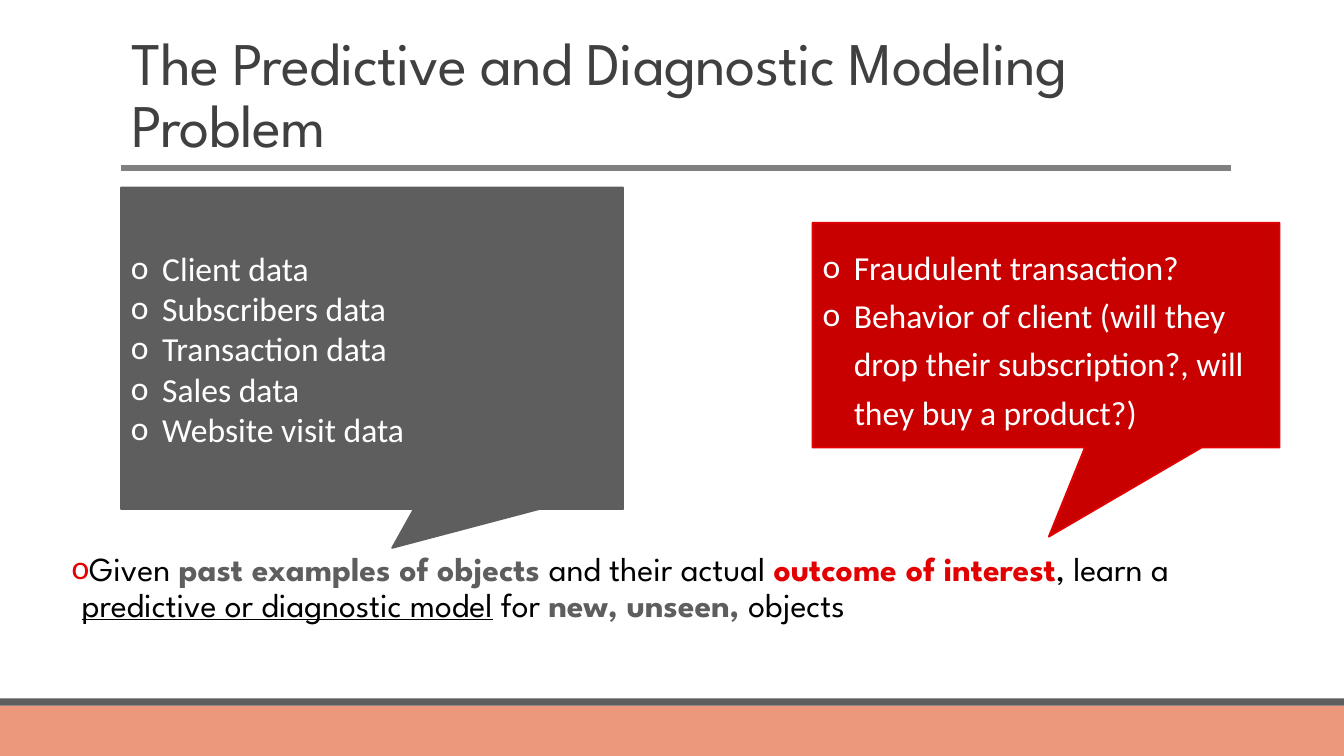
"""Build the slide on the predictive and diagnostic modeling problem."""
from dataclasses import dataclass

import lxml.etree
import pptx
import pptx.dml.color
import pptx.enum.shapes
import pptx.enum.text
import pptx.oxml.ns
import pptx.util

Inches = pptx.util.Inches
Pt = pptx.util.Pt


@dataclass(frozen=True)
class Theme:
    """Colours, fonts and type sizes."""
    gray: str = "5E5E5E"
    red: str = "E20000"
    deep_red: str = "C80000"
    salmon: str = "EC987D"
    rule: str = "808080"
    heading: str = "404040"
    black: str = "000000"
    white: str = "FFFFFF"
    display: str = "League Spartan"
    text: str = "Calibri"
    title_size: float = 43.2
    text_size: float = 24


THEME = Theme()
WIDTH, HEIGHT = 13.33, 7.5
TITLE = "The Predictive and Diagnostic Modeling Problem"
CALLOUTS = [
    {"at": (1.2, 1.86, 4.98, 3.19), "tail": (0.04, 0.621),
     "fill": THEME.gray, "line": THEME.gray, "spacing": 1.0,
     "items": ["Client data", "Subscribers data", "Transaction data",
               "Sales data", "Website visit data"]},
    {"at": (8.06, 2.21, 4.63, 2.23), "tail": (0.006, 0.897),
     "fill": THEME.deep_red, "line": THEME.red, "spacing": 1.2,
     "items": ["Fraudulent transaction?",
               "Behavior of client (will they drop their subscription?, "
               "will they buy a product?)"]},
]
STATEMENT = [
    ("Given ", THEME.black, ""),
    ("past examples of objects ", THEME.gray, "bold"),
    ("and their actual ", THEME.black, ""),
    ("outcome of interest", THEME.red, "bold"),
    (", learn a ", THEME.black, ""),
    ("predictive or diagnostic model", THEME.black, "underline"),
    (" for ", THEME.black, ""),
    ("new, unseen, ", THEME.gray, "bold"),
    ("objects", THEME.black, ""),
]
BANDS = [(HEIGHT - 0.5, 0.5, THEME.salmon), (HEIGHT - 0.57, 0.07, THEME.gray)]


def rgb(color):
    """Turn a hex string into a colour."""
    return pptx.dml.color.RGBColor.from_string(color)


def place(part, at):
    """Move and size a part, in inches."""
    part.left, part.top, part.width, part.height = map(Inches, at)


def add_run(paragraph, words, font, size, color, style=""):
    """Add one formatted run."""
    run = paragraph.add_run()
    run.text = words
    run.font.name = font
    run.font.size = Pt(size)
    run.font.color.rgb = rgb(color)
    run.font.bold = style == "bold"
    run.font.underline = style == "underline"
    return run


def add_bullet(paragraph, indent, color):
    """Give a paragraph a round letter bullet and a hanging indent."""
    props = paragraph._p.get_or_add_pPr()
    props.set("marL", str(Inches(indent)))
    props.set("indent", str(-Inches(indent)))
    qn = pptx.oxml.ns.qn
    bullet_color = lxml.etree.SubElement(props, qn("a:buClr"))
    lxml.etree.SubElement(bullet_color, qn("a:srgbClr"), val=color)
    lxml.etree.SubElement(props, qn("a:buFont"), typeface=THEME.text)
    lxml.etree.SubElement(props, qn("a:buChar"), char="o")


def set_frame(frame, anchor):
    """Wrap the text at a fixed size."""
    frame.word_wrap = True
    frame.auto_size = pptx.enum.text.MSO_AUTO_SIZE.NONE
    frame.vertical_anchor = anchor


def set_paragraph(paragraph, spacing, after=0):
    """Align a paragraph left and set its spacing."""
    paragraph.alignment = pptx.enum.text.PP_ALIGN.LEFT
    paragraph.line_spacing = spacing
    paragraph.space_before = Pt(0)
    paragraph.space_after = Pt(after)


def add_filled(slide, kind, at, fill):
    """Add a flat shape in one colour."""
    shape = slide.shapes.add_shape(kind, *map(Inches, at))
    shape.shadow.inherit = False
    shape.fill.solid()
    shape.fill.fore_color.rgb = rgb(fill)
    shape.line.fill.background()
    return shape


def add_callout(slide, content):
    """Add a callout with its bulleted list."""
    kinds = pptx.enum.shapes.MSO_SHAPE
    callout = add_filled(slide, kinds.RECTANGULAR_CALLOUT, content["at"], content["fill"])
    callout.adjustments[0], callout.adjustments[1] = content["tail"]
    callout.line.color.rgb = rgb(content["line"])
    callout.line.width = Pt(1.25)
    frame = callout.text_frame
    set_frame(frame, pptx.enum.text.MSO_ANCHOR.MIDDLE)
    for number, item in enumerate(content["items"]):
        paragraph = frame.add_paragraph() if number else frame.paragraphs[0]
        set_paragraph(paragraph, content["spacing"])
        add_bullet(paragraph, 0.31, THEME.white)
        add_run(paragraph, item, THEME.text, THEME.text_size, THEME.white)


def add_rule(slide):
    """Draw the line under the title."""
    rule = slide.shapes.add_connector(
        pptx.enum.shapes.MSO_CONNECTOR.STRAIGHT,
        *map(Inches, (1.2, 1.67, 12.21, 1.67)))
    rule.line.color.rgb = rgb(THEME.rule)
    rule.line.width = Pt(4.25)
    lxml.etree.SubElement(rule._element.spPr, pptx.oxml.ns.qn("a:effectLst"))


def fill_title(title):
    """Place and write the title."""
    place(title, (1.2, 0.31, 11, 1.32))
    set_frame(title.text_frame, pptx.enum.text.MSO_ANCHOR.MIDDLE)
    heading = title.text_frame.paragraphs[0]
    set_paragraph(heading, 0.85)
    run = add_run(heading, TITLE, THEME.display, THEME.title_size, THEME.heading)
    run._r.get_or_add_rPr().set("spc", "-50")


def fill_statement(body):
    """Place and write the problem statement."""
    place(body, (0.71, 5.43, 11.98, 0.78))
    frame = body.text_frame
    set_frame(frame, pptx.enum.text.MSO_ANCHOR.TOP)
    frame.margin_left = frame.margin_right = 0
    paragraph = frame.paragraphs[0]
    set_paragraph(paragraph, 0.9, after=2)
    add_bullet(paragraph, 0.1, THEME.red)
    for words, color, style in STATEMENT:
        add_run(paragraph, words, THEME.display, THEME.text_size, color, style)


def main():
    """Build and save the slide."""
    deck = pptx.Presentation()
    deck.slide_width, deck.slide_height = Inches(WIDTH), Inches(HEIGHT)
    slide = deck.slides.add_slide(deck.slide_layouts[1])
    for top, height, color in BANDS:
        add_filled(slide, pptx.enum.shapes.MSO_SHAPE.RECTANGLE,
                   (0, top, WIDTH, height), color)
    add_rule(slide)
    fill_title(slide.shapes.title)
    fill_statement(slide.placeholders[1])
    for content in CALLOUTS:
        add_callout(slide, content)
    deck.save("out.pptx")


if __name__ == "__main__":
    main()
